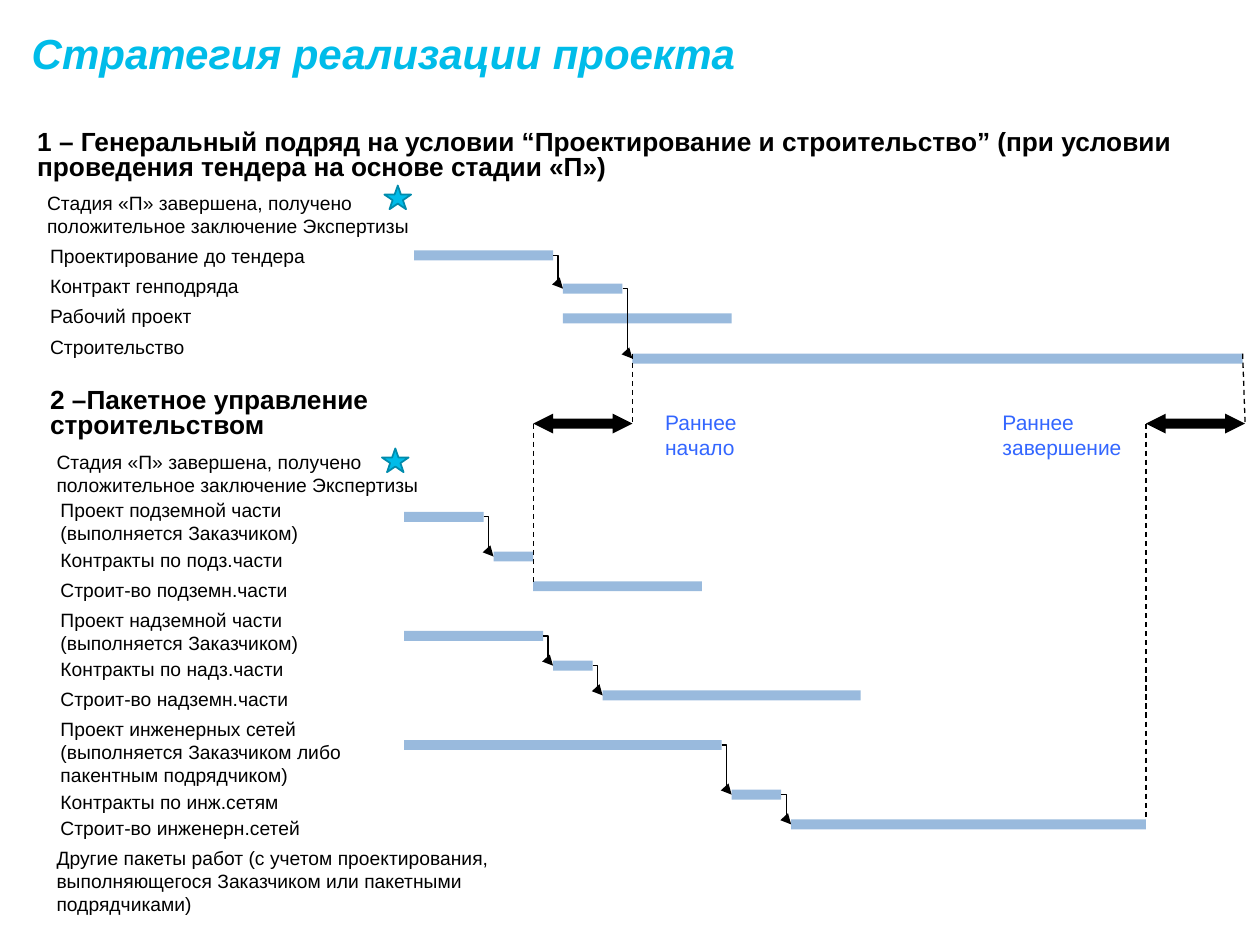
from lxml import etree
from pptx import Presentation
from pptx import util as u
from pptx.dml.color import RGBColor
from pptx.enum import dml, shapes, text
from pptx.oxml import ns

BLACK, BLUE, CYAN, TEAL, BAR = "000000", "3366FF", "00BCE9", "008BAC", "99BADD"
GAP, BAR_HEIGHT, ARROW_MID = 0.2, 0.2, 8.54
STAGE = "Стадия «П» завершена, получено положительное заключение Экспертизы"


def colour(hex_text):
    return RGBColor.from_string(hex_text)


class Schedule:
    """Draw styled schedule elements on one slide, with lengths in centimetres."""

    def __init__(self, slide, font="Arial"):
        self.shapes = slide.shapes
        self.font = font

    def text(self, words, left, top, width, height, size=11, color=BLACK,
             bold=False, italic=False, spacing=1.0, inset=(0.25, 0.13)):
        shape = self.shapes.add_textbox(u.Cm(left), u.Cm(top), u.Cm(width), u.Cm(height))
        frame = shape.text_frame
        frame.word_wrap = True
        frame.vertical_anchor = text.MSO_ANCHOR.TOP
        frame.margin_left = frame.margin_right = u.Cm(inset[0])
        frame.margin_top = frame.margin_bottom = u.Cm(inset[1])
        paragraph = frame.paragraphs[0]
        paragraph.line_spacing = spacing
        run = paragraph.add_run()
        run.text = words
        run.font.name = self.font
        run.font.size = u.Pt(size)
        run.font.bold = bold
        run.font.italic = italic
        run.font.color.rgb = colour(color)

    def shape(self, kind, left, top, width, height, fill, line=None):
        shape = self.shapes.add_shape(kind, u.Cm(left), u.Cm(top), u.Cm(width), u.Cm(height))
        shape.shadow.inherit = False
        shape.fill.solid()
        shape.fill.fore_color.rgb = colour(fill)
        if line:
            shape.line.color.rgb = colour(line)
            shape.line.width = u.Pt(1)
        else:
            shape.line.fill.background()
        return shape

    def bar(self, left, middle, width):
        self.shape(shapes.MSO_SHAPE.RECTANGLE, left, middle - BAR_HEIGHT / 2,
                   width, BAR_HEIGHT, BAR)

    def star(self, left, top):
        self.shape(shapes.MSO_SHAPE.STAR_5_POINT, left, top, 0.54, 0.48, CYAN, TEAL)

    def double_arrow(self, left, middle, width):
        arrow = self.shape(shapes.MSO_SHAPE.LEFT_RIGHT_ARROW, left, middle - 0.2,
                           width, 0.4, BLACK)
        arrow.adjustments[0], arrow.adjustments[1] = 0.5, 1.0

    def connector(self, kind, start, end):
        connector = self.shapes.add_connector(kind, *map(u.Cm, start + end))
        connector.line.color.rgb = colour(BLACK)
        connector.line.width = u.Pt(0.75)
        etree.SubElement(connector.element.spPr, ns.qn("a:effectLst"))
        return connector

    def link(self, start, end):
        connector = self.connector(shapes.MSO_CONNECTOR.ELBOW, start, end)
        line = connector.element.spPr.find(ns.qn("a:ln"))
        etree.SubElement(line, ns.qn("a:tailEnd"), type="triangle")

    def dashes(self, start, end):
        connector = self.connector(shapes.MSO_CONNECTOR.STRAIGHT, start, end)
        connector.line.dash_style = dml.MSO_LINE.DASH

    def chain(self, label_left, tasks):
        previous = None
        for words, top, width, height, left, middle, length in tasks:
            self.text(words, label_left, top, width, height)
            self.bar(left, middle, length)
            if previous and abs(left - previous[0] - GAP) < 0.01:
                self.link(previous, (left, middle))
                previous = None
            if previous is None or left > previous[0]:
                previous = (left + length, middle)


def main():
    presentation = Presentation()
    presentation.slide_width, presentation.slide_height = u.Cm(25.4), u.Cm(19.05)
    slide = presentation.slides.add_slide(presentation.slide_layouts[6])
    schedule = Schedule(slide)

    schedule.text("Стратегия реализации проекта", 0, 0.71, 24.33, 2.11, 24, CYAN,
                  bold=True, italic=True, spacing=0.85, inset=(0.64, 0))
    for words, left, top, width in (
        ("1 – Генеральный подряд на условии “Проектирование и строительство” "
         "(при условии проведения тендера на основе стадии «П»)", 0.5, 2.51, 23.6),
        ("2 –Пакетное управление строительством", 0.76, 7.72, 10.6),
    ):
        schedule.text(words, left, top, width, 1, 15, bold=True, spacing=0.8)

    for left, top, star_left, star_top in ((0.7, 3.73, 7.75, 3.74), (0.89, 8.94, 7.7, 9.04)):
        schedule.text(STAGE, left, top, 8, 1.2)
        schedule.star(star_left, star_top)

    schedule.chain(0.76, (
        ("Проектирование до тендера", 4.8, 7, 0.74, 8.35, 5.15, 2.8),
        ("Контракт генподряда", 5.4, 5.8, 0.74, 11.35, 5.82, 1.2),
        ("Рабочий проект", 6, 6.2, 0.74, 11.35, 6.42, 3.4),
        ("Строительство", 6.63, 4.2, 0.74, 12.75, 7.23, 12.3),
    ))
    packages = (
        (("Проект подземной части (выполняется Заказчиком)", 9.92, 5.8, 1.2, 8.15, 10.42, 1.6),
         ("Контракты по подз.части", 10.93, 5.8, 0.74, 9.95, 11.22, 0.8),
         ("Строит-во подземн.части", 11.53, 5.8, 0.74, 10.75, 11.82, 3.4)),
        (("Проект надземной части (выполняется Заказчиком)", 12.13, 5.8, 1.9, 8.15, 12.82, 2.8),
         ("Контракты по надз.части", 13.13, 5.8, 0.74, 11.15, 13.42, 0.8),
         ("Строит-во надземн.части", 13.73, 5.8, 0.74, 12.15, 14.02, 5.2)),
        (("Проект инженерных сетей (выполняется Заказчиком либо пакентным подрядчиком)",
          14.33, 6.35, 1.68, 8.15, 15.02, 6.4),
         ("Контракты по инж.сетям", 15.8, 5.8, 0.74, 14.75, 16.02, 1),
         ("Строит-во инженерн.сетей", 16.33, 5.8, 0.74, 15.95, 16.62, 7.15)),
    )
    for package in packages:
        schedule.chain(0.97, package)
    schedule.text("Другие пакеты работ (с учетом проектирования, выполняющегося Заказчиком "
                  "или пакетными подрядчиками)", 0.89, 16.93, 10.4, 1.68)

    for early, late, bottom, words, left, width in (
        (10.75, 12.75, 11.73, "Раннее начало", 13.16, 2.8),
        (23.1, 25.05, 16.53, "Раннее завершение", 19.96, 3.2),
    ):
        schedule.dashes((late, 7.13), (early + 2, ARROW_MID))
        schedule.dashes((early, ARROW_MID), (early, bottom))
        schedule.double_arrow(early, ARROW_MID, 2)
        schedule.text(words, left, 8.13, width, 1.28, 12, BLUE)

    presentation.save("out.pptx")


if __name__ == "__main__":
    main()
